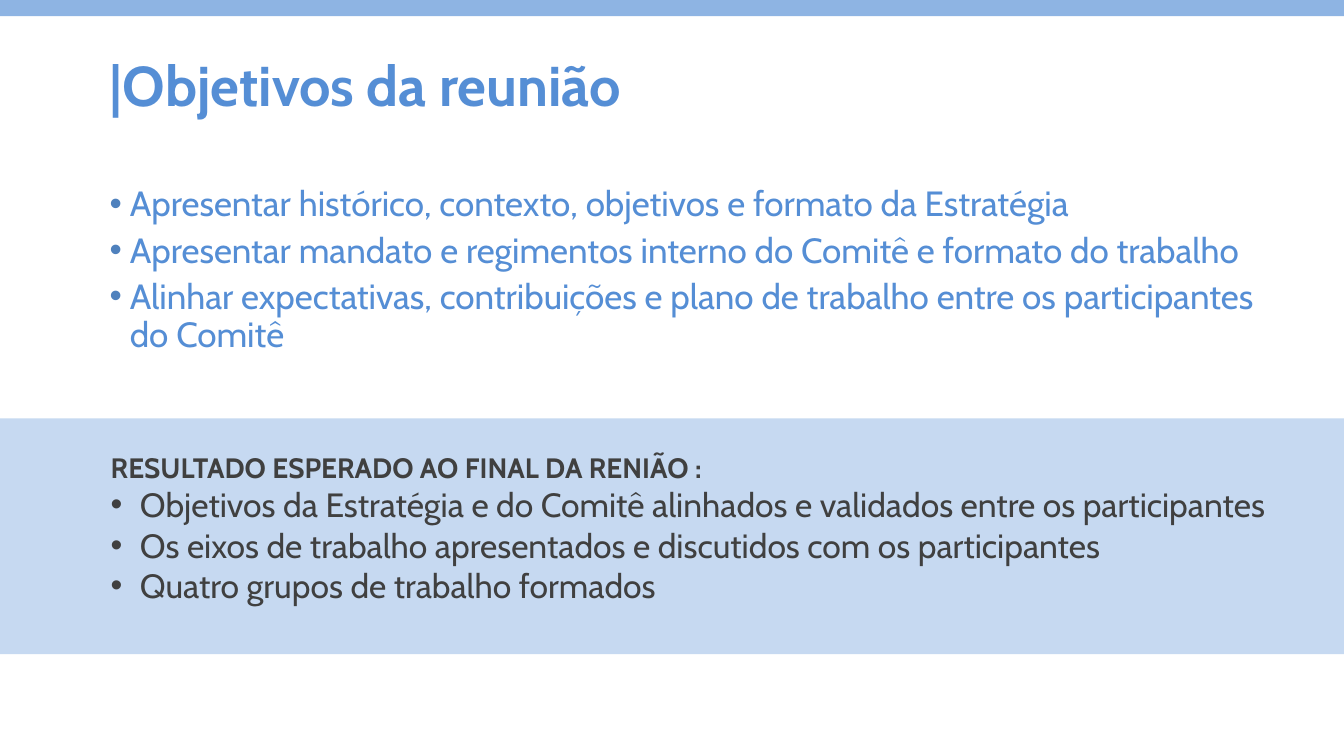
import pptx
import pptx.dml.color
import pptx.enum.shapes
import pptx.enum.text
import pptx.oxml.ns
import pptx.util
from lxml import etree

COLORS = {"bar": "8EB4E3", "band": "C6D9F1", "blue": "558ED5",
          "bullet": "4F81BD", "dark": "404040"}
FONT = "Cabin"
WIDTH, HEIGHT = 13.33, 7.5
COLUMNS, ROWS = 133.3, 75
MARGIN = 9.9
ANCHOR = pptx.enum.text.MSO_ANCHOR
AUTO_SIZE = pptx.enum.text.MSO_AUTO_SIZE


class MeetingSlide:
    def __init__(self, presentation):
        layout = presentation.slide_layouts.get_by_name("Title Only")
        self.slide = presentation.slides.add_slide(layout)

    def box(self, column, row, columns, rows):
        return (pptx.util.Inches(column * WIDTH / COLUMNS),
                pptx.util.Inches(row * HEIGHT / ROWS),
                pptx.util.Inches(columns * WIDTH / COLUMNS),
                pptx.util.Inches(rows * HEIGHT / ROWS))

    def color(self, name):
        return pptx.dml.color.RGBColor.from_string(COLORS[name])

    def band(self, row, rows, color):
        shape = self.slide.shapes.add_shape(
            pptx.enum.shapes.MSO_SHAPE.RECTANGLE, *self.box(0, row, COLUMNS, rows))
        shape.shadow.inherit = False
        shape.fill.solid()
        shape.fill.fore_color.rgb = self.color(color)
        shape.line.fill.background()

    def frame(self, shape, anchor, auto_size=AUTO_SIZE.NONE):
        frame = shape.text_frame
        frame.word_wrap = True
        frame.vertical_anchor = anchor
        frame.auto_size = auto_size
        return frame

    def format(self, paragraph, size, color, bold=False, spacing=1.0, before=0):
        paragraph.alignment = pptx.enum.text.PP_ALIGN.LEFT
        paragraph.line_spacing = spacing
        paragraph.space_before = pptx.util.Pt(before)
        for run in paragraph.runs:
            run.font.name = FONT
            run.font.size = pptx.util.Pt(size)
            run.font.bold = bold
            run.font.color.rgb = self.color(color)

    def bullet(self, paragraph, indent, color):
        properties = paragraph._p.get_or_add_pPr()
        offset = pptx.util.Inches(indent)
        properties.set("marL", str(offset))
        properties.set("indent", str(-offset))
        qn = pptx.oxml.ns.qn
        fill = etree.SubElement(properties, qn("a:buClr"))
        etree.SubElement(fill, qn("a:srgbClr")).set("val", COLORS[color])
        etree.SubElement(properties, qn("a:buFont")).set("typeface", "Arial")
        etree.SubElement(properties, qn("a:buChar")).set("char", "•")

    def title(self, text, box):
        shape = self.slide.shapes.title
        shape.left, shape.top, shape.width, shape.height = self.box(*box)
        frame = self.frame(shape, ANCHOR.BOTTOM)
        frame.text = text
        self.format(frame.paragraphs[0], 40, "blue", bold=True, spacing=0.9)

    def objectives(self, items, box):
        shape = self.slide.shapes.add_textbox(*self.box(*box))
        frame = self.frame(shape, ANCHOR.MIDDLE)
        frame.text = "\n".join(items)
        for paragraph in frame.paragraphs:
            self.format(paragraph, 25, "blue", spacing=0.9, before=6)
            self.bullet(paragraph, 0.2, "bullet")

    def results(self, heading, items, box):
        shape = self.slide.shapes.add_textbox(*self.box(*box))
        frame = self.frame(shape, ANCHOR.TOP, AUTO_SIZE.SHAPE_TO_FIT_TEXT)
        frame.text = "\n".join([heading, *items])
        self.format(frame.paragraphs[0], 20, "dark", bold=True)
        for paragraph in frame.paragraphs[1:]:
            self.format(paragraph, 24, "dark")
            self.bullet(paragraph, 0.29, "dark")


def main():
    presentation = pptx.Presentation()
    presentation.slide_width = pptx.util.Inches(WIDTH)
    presentation.slide_height = pptx.util.Inches(HEIGHT)
    meeting = MeetingSlide(presentation)
    meeting.band(41.5, 23.4, "band")
    meeting.objectives([
        "Apresentar histórico, contexto, objetivos e formato da Estratégia",
        "Apresentar mandato e regimentos interno do Comitê e formato do trabalho",
        "Alinhar expectativas, contribuições e plano de trabalho entre os "
        "participantes do Comitê",
    ], (MARGIN, 14.5, 115.6, 24.7))
    meeting.title("|Objetivos da reunião", (MARGIN, 4, 94.9, 8.3))
    meeting.band(0, 1.6, "bar")
    meeting.results("RESULTADO ESPERADO AO FINAL DA RENIÃO :", [
        "Objetivos da Estratégia e do Comitê alinhados e validados entre os "
        "participantes",
        "Os eixos de trabalho apresentados e discutidos com os participantes",
        "Quatro grupos de trabalho formados",
    ], (10, 44.2, 118.6, 16.5))
    presentation.save("out.pptx")


if __name__ == "__main__":
    main()
